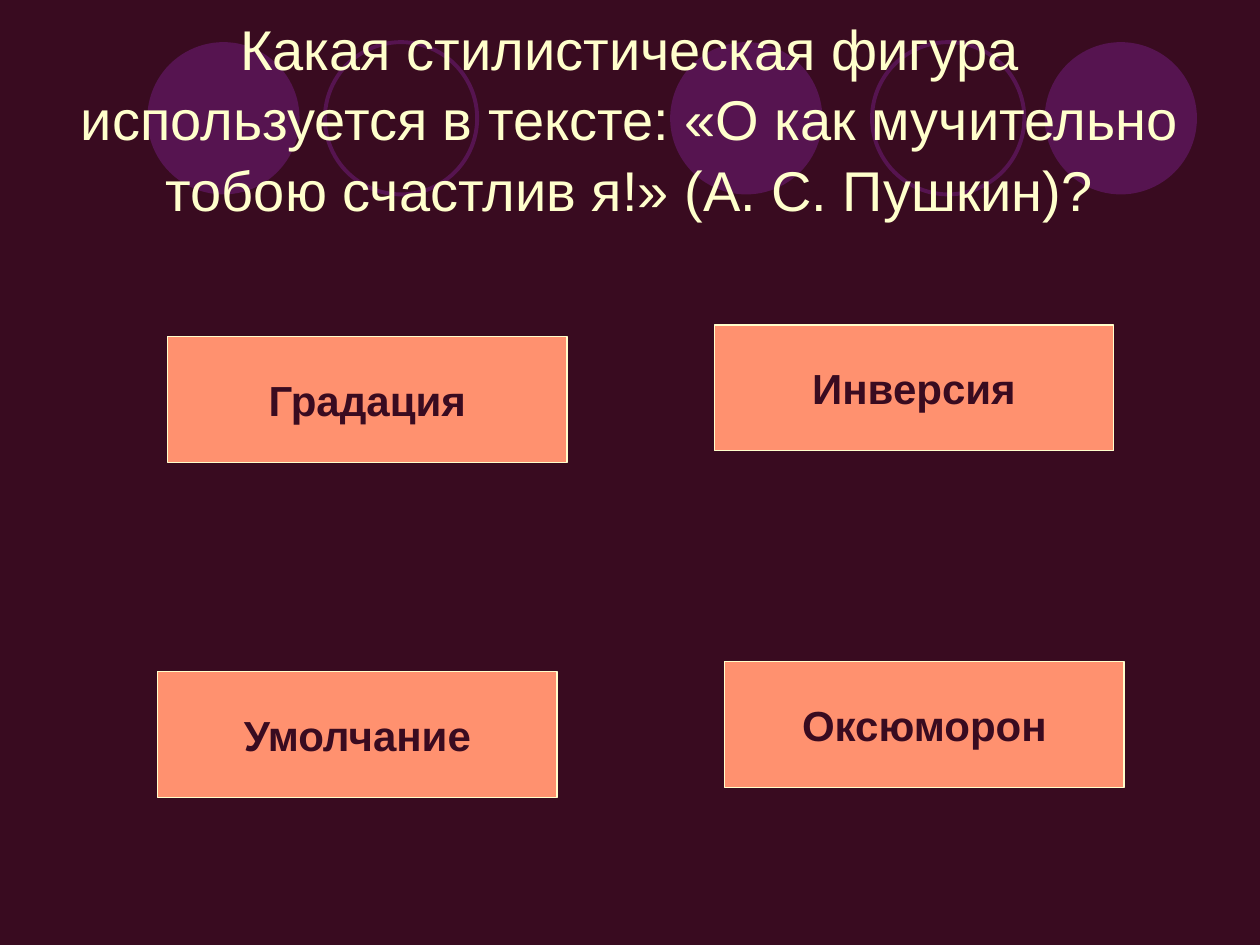
"""Build a quiz slide with a question and four answer boxes."""
from pptx import Presentation
from pptx.dml.color import RGBColor
from pptx.enum.shapes import MSO_SHAPE
from pptx.enum.text import MSO_ANCHOR, MSO_AUTO_SIZE, PP_ALIGN
from pptx.util import Cm, Pt

RECT, OVAL = MSO_SHAPE.RECTANGLE, MSO_SHAPE.OVAL
CENTER, MIDDLE, NO_FIT = PP_ALIGN.CENTER, MSO_ANCHOR.MIDDLE, MSO_AUTO_SIZE.NONE

DARK = RGBColor(0x39, 0x0B, 0x20)
PURPLE = RGBColor(0x56, 0x14, 0x50)
CREAM = RGBColor(0xFF, 0xFF, 0xCC)
CORAL = RGBColor(0xFF, 0x91, 0x6F)

QUESTION = ("Какая стилистическая фигура используется в тексте: "
            "«О как мучительно тобою счастлив я!» (А. С. Пушкин)?")
ANSWERS = [
    ("Умолчание", 3.18, 13.54),
    ("Градация", 3.38, 6.78),
    ("Инверсия", 14.4, 6.55),
    ("Оксюморон", 14.61, 13.34),
]
DISCS = [13.51, 21.06, 2.97]
RINGS = [17.58, 6.55]
CIRCLE_TOP, CIRCLE_SIZE = 0.85, 3.07
BOX_W, BOX_H = 8.05, 2.54


def add_shape(s, kind, left, top, width, height, fill, line, weight):
    sp = s.shapes.add_shape(kind, Cm(left), Cm(top), Cm(width), Cm(height))
    sp.shadow.inherit = False
    if fill is None:
        sp.fill.background()
    else:
        sp.fill.solid()
        sp.fill.fore_color.rgb = fill
    if line is None:
        sp.line.fill.background()
    else:
        sp.line.color.rgb = line
        sp.line.width = Pt(weight)
    return sp


def set_text(sp, text, size, color, bold, wrap):
    tf = sp.text_frame
    tf.text = text
    tf.auto_size = NO_FIT
    tf.word_wrap = wrap
    tf.vertical_anchor = MIDDLE
    p = tf.paragraphs[0]
    p.alignment = CENTER
    font = p.runs[0].font
    font.name = "Arial"
    font.size = Pt(size)
    font.bold = bold
    font.color.rgb = color
    return p


def main():
    prs = Presentation()
    prs.slide_width, prs.slide_height = Cm(25.4), Cm(19.05)
    s = prs.slides.add_slide(prs.slide_layouts[5])
    s.background.fill.solid()
    s.background.fill.fore_color.rgb = DARK

    for lefts, fill, line in ((DISCS, PURPLE, None), (RINGS, None, PURPLE)):
        for left in lefts:
            add_shape(s, OVAL, left, CIRCLE_TOP, CIRCLE_SIZE, CIRCLE_SIZE,
                      fill, line, 2.25)

    title = s.shapes.title
    title.left, title.top = Cm(1.27), Cm(0.76)
    title.width, title.height = Cm(22.86), Cm(3.18)
    p = set_text(title, QUESTION, 32, CREAM, False, True)
    p.line_spacing = 1.05
    s.shapes._spTree.append(title._element)

    for text, left, top in ANSWERS:
        sp = add_shape(s, RECT, left, top, BOX_W, BOX_H, CORAL, CREAM, 0.75)
        set_text(sp, text, 24, DARK, True, False)

    prs.save("out.pptx")


if __name__ == "__main__":
    main()
